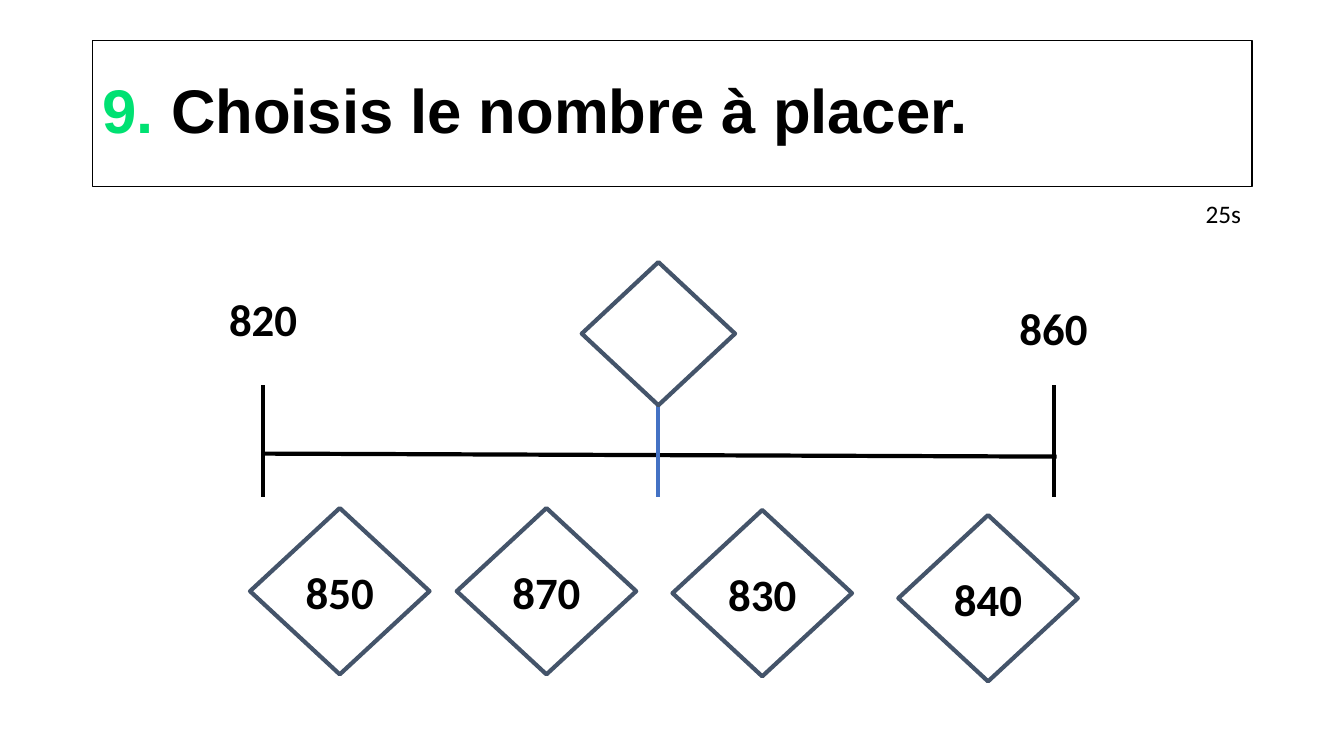
from lxml import etree
from pptx import Presentation
from pptx.dml.color import RGBColor
from pptx.enum.shapes import MSO_CONNECTOR, MSO_SHAPE
from pptx.enum.text import MSO_ANCHOR, PP_ALIGN
from pptx.oxml.ns import qn
from pptx.util import Inches, Pt

STRAIGHT = MSO_CONNECTOR.STRAIGHT
RECT, DIAMOND = MSO_SHAPE.RECTANGLE, MSO_SHAPE.DIAMOND
TOP, MIDDLE = MSO_ANCHOR.TOP, MSO_ANCHOR.MIDDLE
LEFT, CENTER = PP_ALIGN.LEFT, PP_ALIGN.CENTER
COLORS = {"ink": "000000", "paper": "FFFFFF", "number": "00E172",
          "diamond": "44546A", "marker": "4472C4"}


def rgb(name):
    return RGBColor.from_string(COLORS[name])


def write(shape, runs, size, font="Calibri", bold=True, align=CENTER,
          anchor=MIDDLE, wrap=True):
    """Write one paragraph made of (text, colour) runs."""
    tf = shape.text_frame
    tf.word_wrap = wrap
    tf.vertical_anchor = anchor
    p = tf.paragraphs[0]
    p.alignment = align
    for text, color in runs:
        r = p.add_run()
        r.text = text
        r.font.size, r.font.name, r.font.bold = Pt(size), font, bold
        r.font.color.rgb = rgb(color)
    return p


def add_outline(s, kind, box, color, width):
    sp = s.shapes.add_shape(kind, *map(Inches, box))
    sp.shadow.inherit = False
    sp.fill.background()
    sp.line.color.rgb = rgb(color)
    sp.line.width = Pt(width)
    return sp


def add_line(s, x1, y1, x2, y2, color="ink"):
    line = s.shapes.add_connector(STRAIGHT, *map(Inches, (x1, y1, x2, y2)))
    line.line.color.rgb = rgb(color)
    line.line.width = Pt(3)
    etree.SubElement(line._element.spPr, qn("a:effectLst"))


def add_label(s, box, text, size=32, **style):
    sp = s.shapes.add_textbox(*map(Inches, box))
    write(sp, [(text, "ink")], size, anchor=TOP, **style)


def add_title(s, box, number, question):
    sp = add_outline(s, RECT, box, "ink", 1)
    sp.fill.solid()
    sp.fill.fore_color.rgb = rgb("paper")
    p = write(sp, [(number, "number"), (" " + question, "ink")], 44,
              font="Arial", align=LEFT)
    p.line_spacing = 0.9


def add_number_line(s, box, start, end):
    """Axis with a tick and a label at each end and an empty diamond midway."""
    x, y, w, h = box
    right, bottom, mid = x + w, y + h, x + w / 2
    tick_top, axis = bottom - 1.11, bottom - 0.43
    diamond_w, diamond_h = 1.52, 1.42
    label_w, label_h = 1.3, 0.64

    add_line(s, x, axis, right + 0.03, axis + 0.03)
    for tick_x, text, label_y in ((x, start, y + 0.24), (right, end, y + 0.33)):
        add_line(s, tick_x, bottom, tick_x, tick_top)
        add_label(s, (tick_x - label_w / 2, label_y, label_w, label_h), text)
    add_line(s, mid, y + diamond_h, mid, bottom, "marker")
    add_outline(s, DIAMOND, (mid - diamond_w / 2, y, diamond_w, diamond_h),
                "diamond", 3)


def add_choices(s, box, choices):
    """Answer diamonds, each offset (dx, dy) from the corner of the box."""
    x, y, w, h = box
    for text, dx, dy in choices:
        sp = add_outline(s, DIAMOND, (x + dx, y + dy, w, h), "diamond", 3)
        write(sp, [(text, "ink")], 32, wrap=False)


def main():
    prs = Presentation()
    prs.slide_width, prs.slide_height = Inches(13.33), Inches(7.5)
    s = prs.slides.add_slide(prs.slide_layouts[6])

    # Question and time allowed
    add_title(s, (0.92, 0.4, 11.5, 1.45), "9.", "Choisis le nombre à placer.")
    add_label(s, (11.86, 1.92, 0.56, 0.4), "25s", size=18, bold=False,
              align=LEFT, wrap=False)

    # Number line
    add_number_line(s, (2.61, 2.6, 7.84, 2.33), "820", "860")

    # Possible answers
    add_choices(s, (2.48, 5.04, 1.78, 1.65),
                [("850", 0, 0), ("870", 2.05, 0),
                 ("830", 4.19, 0.02), ("840", 6.43, 0.07)])

    prs.save("out.pptx")


if __name__ == "__main__":
    main()
